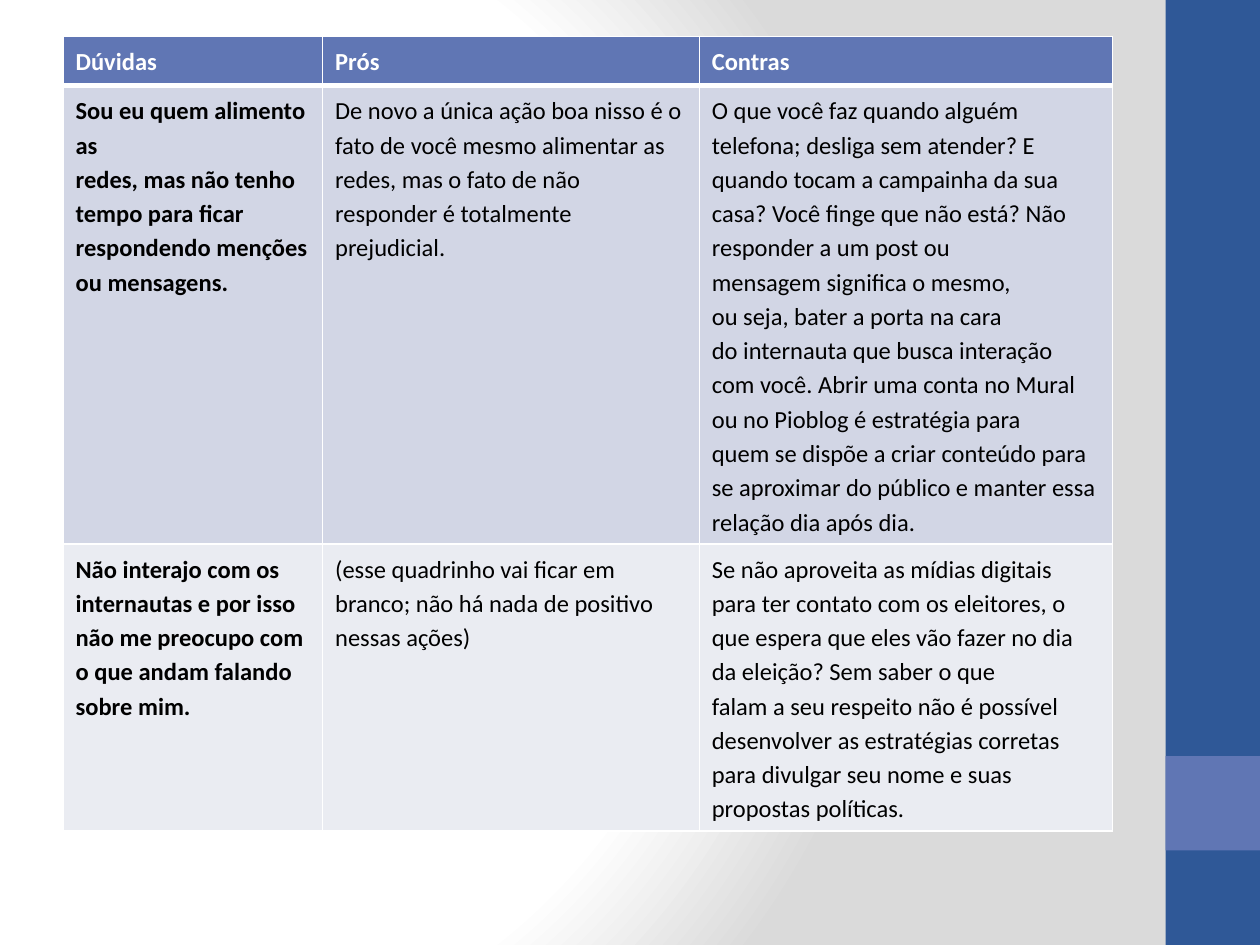
from lxml import etree
from pptx import Presentation
from pptx.dml.color import RGBColor
from pptx.enum.shapes import MSO_SHAPE
from pptx.oxml import parse_xml
from pptx.oxml.ns import nsdecls, qn
from pptx.util import Inches, Pt

RECTANGLE = MSO_SHAPE.RECTANGLE

COLORS = {
    "white": "FFFFFF",
    "black": "000000",
    "grey": "DADADA",
    "band": "2F5897",
    "accent": "6076B4",
    "row_dark": "D2D6E5",
    "row_light": "EAECF2",
}

COLUMN_WIDTHS = [2.06, 2.99, 3.28]
ROW_HEIGHTS = [0.39, 3.63, 2.27]
ROW_FILLS = ["accent", "row_dark", "row_light"]

# Each line of a cell is one paragraph
ROWS = [
    ["Dúvidas", "Prós", "Contras"],
    [
        "Sou eu quem alimento as\n"
        "redes, mas não tenho tempo para ficar respondendo menções ou mensagens.",
        "De novo a única ação boa nisso é o fato de você mesmo alimentar as redes, "
        "mas o fato de não responder é totalmente prejudicial.",
        "O que você faz quando alguém telefona; desliga sem atender? E quando tocam "
        "a campainha da sua casa? Você finge que não está? Não responder a um post ou\n"
        "mensagem significa o mesmo,\n"
        "ou seja, bater a porta na cara\n"
        "do internauta que busca interação com você. Abrir uma conta no Mural ou "
        "no Pioblog é estratégia para\n"
        "quem se dispõe a criar conteúdo para se aproximar do público e manter essa "
        "relação dia após dia.",
    ],
    [
        "Não interajo com os\n"
        "internautas e por isso não me preocupo com o que andam falando sobre mim.",
        "(esse quadrinho vai ficar em branco; não há nada de positivo nessas ações)",
        "Se não aproveita as mídias digitais para ter contato com os eleitores, o que "
        "espera que eles vão fazer no dia da eleição? Sem saber o que\n"
        "falam a seu respeito não é possível desenvolver as estratégias corretas para "
        "divulgar seu nome e suas\n"
        "propostas políticas.",
    ],
]


class SlideBuilder:
    font_name = "Calibri"
    font_size = Pt(14)
    line_spacing = 1.15

    def __init__(self, page):
        self.page = page

    def background(self, stops, focus):
        """Circular gradient: stops are (percent, color), focus is l, t, r, b."""
        stop_xml = "".join(
            f'<a:gs pos="{percent * 1000}"><a:srgbClr val="{COLORS[color]}"/></a:gs>'
            for percent, color in stops
        )
        left, top, right, bottom = (percent * 1000 for percent in focus)
        backdrop = parse_xml(
            f'<p:bg {nsdecls("p", "a")}><p:bgPr><a:gradFill rotWithShape="1">'
            f'<a:gsLst>{stop_xml}</a:gsLst><a:path path="circle">'
            f'<a:fillToRect l="{left}" t="{top}" r="{right}" b="{bottom}"/></a:path>'
            f'</a:gradFill><a:effectLst/></p:bgPr></p:bg>'
        )
        self.page.element.find(qn("p:cSld")).insert(0, backdrop)

    def block(self, left, top, width, height, color):
        shape = self.page.shapes.add_shape(
            RECTANGLE, Inches(left), Inches(top), Inches(width), Inches(height))
        shape.shadow.inherit = False
        shape.fill.solid()
        shape.fill.fore_color.rgb = RGBColor.from_string(COLORS[color])
        shape.line.fill.background()

    def table(self, left, top, widths, heights, rows, fills):
        table = self.page.shapes.add_table(
            len(rows), len(widths), Inches(left), Inches(top),
            Inches(sum(widths)), Inches(sum(heights))).table
        for column, width in zip(table.columns, widths):
            column.width = Inches(width)
        for row, height in zip(table.rows, heights):
            row.height = Inches(height)
        for i, texts in enumerate(rows):
            for j, text in enumerate(texts):
                cell = table.cell(i, j)
                cell.fill.solid()
                cell.fill.fore_color.rgb = RGBColor.from_string(COLORS[fills[i]])
                # The rule under the header is thicker
                self.borders(cell, top=3 if i == 1 else 1, bottom=3 if i == 0 else 1)
                self.cell_text(cell, text, bold=i == 0 or j == 0,
                               color="white" if i == 0 else "black")

    def borders(self, cell, top, bottom):
        properties = cell._tc.get_or_add_tcPr()
        sides = [("lnL", 1), ("lnR", 1), ("lnT", top), ("lnB", bottom)]
        for position, (side, points) in enumerate(sides):
            line = etree.Element(qn(f"a:{side}"), w=str(Pt(points)))
            fill = etree.SubElement(line, qn("a:solidFill"))
            etree.SubElement(fill, qn("a:srgbClr"), val=COLORS["white"])
            properties.insert(position, line)

    def cell_text(self, cell, text, bold, color):
        cell.text = text
        for para in cell.text_frame.paragraphs:
            para.line_spacing = self.line_spacing
            para.font.name = self.font_name
            para.font.size = self.font_size
            para.font.bold = bold
            para.font.color.rgb = RGBColor.from_string(COLORS[color])


def main():
    deck = Presentation()
    deck.slide_width, deck.slide_height = Inches(10), Inches(7.5)
    builder = SlideBuilder(deck.slides.add_slide(deck.slide_layouts[6]))

    # Background and side band
    builder.background([(0, "white"), (75, "white"), (100, "grey")], (20, 50, 100, 50))
    builder.block(9.25, 0, 0.75, 7.5, "band")
    builder.block(9.25, 6, 0.75, 0.75, "accent")

    # Table of doubts, pros and cons
    builder.table(0.5, 0.29, COLUMN_WIDTHS, ROW_HEIGHTS, ROWS, ROW_FILLS)

    deck.save("out.pptx")


if __name__ == "__main__":
    main()
